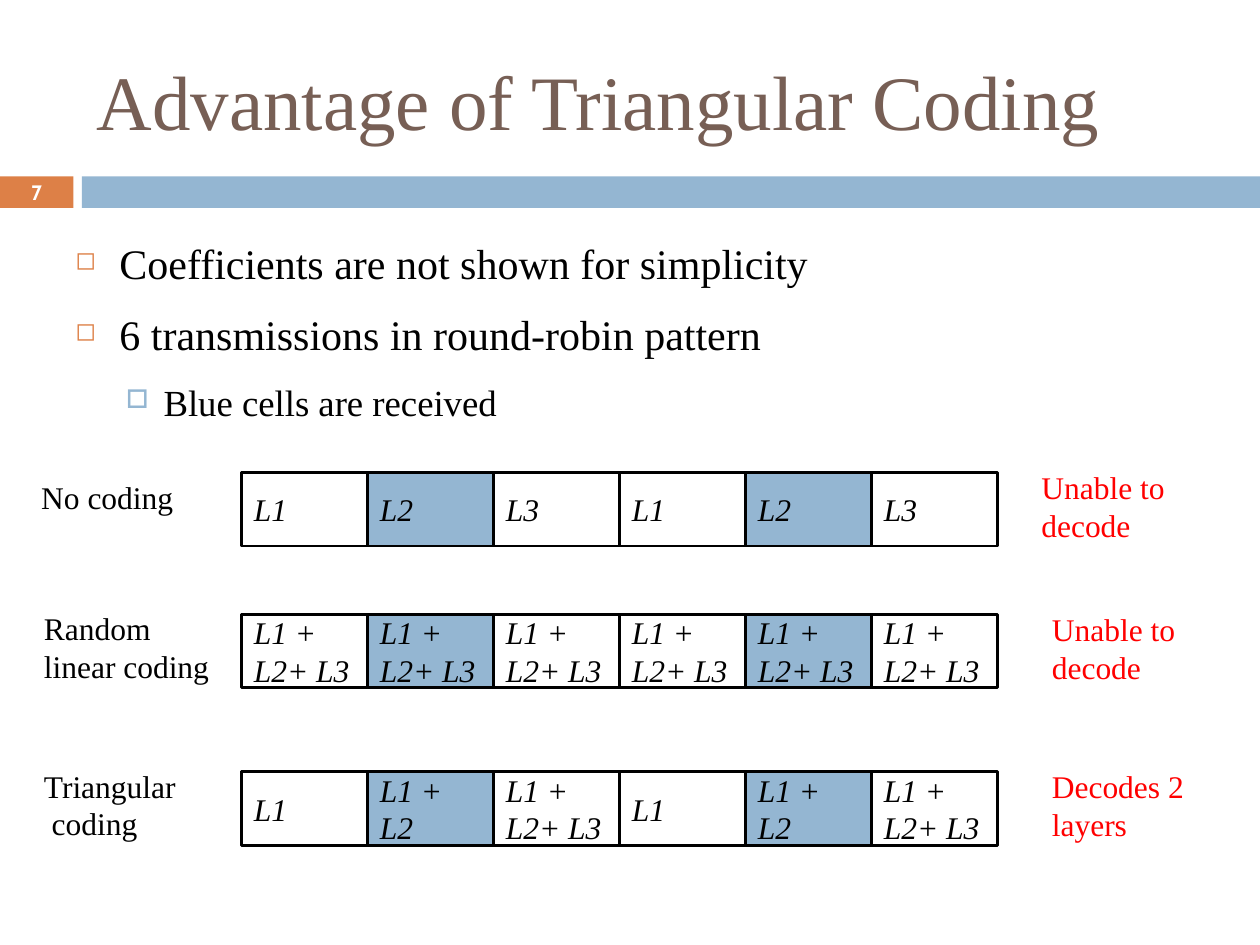
from dataclasses import dataclass

from lxml import etree
from pptx import Presentation
from pptx.dml.color import RGBColor
from pptx.enum.shapes import MSO_SHAPE
from pptx.enum.text import MSO_ANCHOR, PP_ALIGN
from pptx.oxml.ns import qn
from pptx.util import Pt

RECT = MSO_SHAPE.RECTANGLE
TOP, MIDDLE = MSO_ANCHOR.TOP, MSO_ANCHOR.MIDDLE
LEFT, CENTER = PP_ALIGN.LEFT, PP_ALIGN.CENTER


@dataclass(frozen=True)
class Theme:
    serif: str = "Times New Roman"
    sans: str = "Cabin"
    brown: str = "775F55"
    orange: str = "DD8047"
    blue: str = "94B6D2"
    black: str = "000000"
    white: str = "FFFFFF"
    red: str = "FF0000"
    title: float = 44
    body: float = 24
    sub: float = 21
    label: float = 18
    page: float = 11.9


class Deck:
    def __init__(self, theme, slide):
        self.theme = theme
        self.slide = slide

    def put(self, para, text, size, color, font=None, bold=False, italic=False):
        """Add text to a paragraph, with a line break at each newline."""
        for i, part in enumerate(text.split("\n")):
            if i:
                para.add_line_break()
            run = para.add_run()
            run.text = part
            face = run.font
            face.name = font or self.theme.serif
            face.size = Pt(size)
            face.bold = bold
            face.italic = italic
            face.color.rgb = RGBColor.from_string(color)

    def title(self, text, left, top, width, height):
        shape = self.slide.shapes.title
        shape.left, shape.top = Pt(left), Pt(top)
        shape.width, shape.height = Pt(width), Pt(height)
        frame = shape.text_frame
        frame.vertical_anchor = MIDDLE
        para = frame.paragraphs[0]
        para.alignment = LEFT
        self.put(para, text, self.theme.title, self.theme.brown)

    def rect(self, left, top, width, height, fill, line=None):
        shape = self.slide.shapes.add_shape(
            RECT, Pt(left), Pt(top), Pt(width), Pt(height))
        shape.shadow.inherit = False
        shape.fill.solid()
        shape.fill.fore_color.rgb = RGBColor.from_string(fill)
        if line:
            shape.line.color.rgb = RGBColor.from_string(line)
            shape.line.width = Pt(1.5)
        else:
            shape.line.fill.background()
        return shape

    def cell(self, text, left, top, width, height, fill):
        black = self.theme.black
        frame = self.rect(left, top, width, height, fill, black).text_frame
        frame.word_wrap = True
        frame.vertical_anchor = MIDDLE
        para = frame.paragraphs[0]
        para.alignment = LEFT
        self.put(para, text, self.theme.label, black, italic=True)

    def box(self, left, top, width, height, anchor=TOP):
        frame = self.slide.shapes.add_textbox(
            Pt(left), Pt(top), Pt(width), Pt(height)).text_frame
        frame.word_wrap = True
        frame.vertical_anchor = anchor
        return frame

    def label(self, text, left, top, width, height, color):
        para = self.box(left, top, width, height).paragraphs[0]
        self.put(para, text, self.theme.label, color)

    def page(self, text, left, top, width, height):
        para = self.box(left, top, width, height, MIDDLE).paragraphs[0]
        para.alignment = CENTER
        self.put(para, text, self.theme.page, self.theme.white,
                 self.theme.sans, bold=True)

    def bullets(self, items, left, top, width, height):
        theme = self.theme
        # level: size, mark, mark colour, mark percent, margin, hang
        styles = [(theme.body, "◻", theme.orange, 60, 25.2, 25.2),
                  (theme.sub, "□", theme.blue, 70, 50.4, 21.6)]
        frame = self.box(left, top, width, height)
        for i, (level, text) in enumerate(items):
            para = frame.add_paragraph() if i else frame.paragraphs[0]
            size, mark, color, scale, margin, hang = styles[level]
            para.level = level
            para.space_before = Pt(12)
            self.put(para, text, size, theme.black)
            props = para._p.get_or_add_pPr()
            props.set("marL", str(Pt(margin)))
            props.set("indent", str(-Pt(hang)))
            tint = etree.SubElement(props, qn("a:buClr"))
            etree.SubElement(tint, qn("a:srgbClr"), val=color)
            etree.SubElement(props, qn("a:buSzPct"), val=str(scale * 1000))
            etree.SubElement(props, qn("a:buChar"), char=mark)


def main():
    show = Presentation()
    show.slide_width, show.slide_height = Pt(720), Pt(540)
    theme = Theme()
    deck = Deck(theme, show.slides.add_slide(show.slide_layouts[5]))

    deck.rect(0, 100.8, 42, 18, theme.orange)
    deck.rect(46.8, 100.8, 673.2, 18, theme.blue)
    deck.title("Advantage of Triangular Coding", 48, 18, 642, 78)
    deck.page("7", 0, 100, 42, 19.5)
    deck.bullets([(0, "Coefficients are not shown for simplicity"),
                  (0, "6 transmissions in round-robin pattern"),
                  (1, "Blue cells are received")], 36, 132, 618, 342)

    mix = "L1 + L2+ L3"
    # cell top, three layers sent in turn, name and its box, result and its place
    rows = [
        (270, ["L1", "L2", "L3"], " No coding", (12, 269.5, 102, 29),
         "Unable to decode", (588, 264)),
        (351, [mix] * 3, "Random linear coding", (18, 344.5, 120, 51),
         "Unable to decode", (594, 345)),
        (441, ["L1", "L1 + L2", mix], "Triangular\n coding", (18, 434.5, 90, 51),
         "Decodes 2 layers", (594, 435)),
    ]
    start, width, height = 138, 72, 42
    for top, layers, name, area, result, spot in rows:
        for i, text in enumerate(layers * 2):
            fill = theme.blue if i % 3 == 1 else theme.white
            deck.cell(text, start + i * width, top, width, height, fill)
        deck.label(name, *area, theme.black)
        deck.label(result, *spot, 90, 51, theme.red)

    show.save("out.pptx")


if __name__ == "__main__":
    main()
